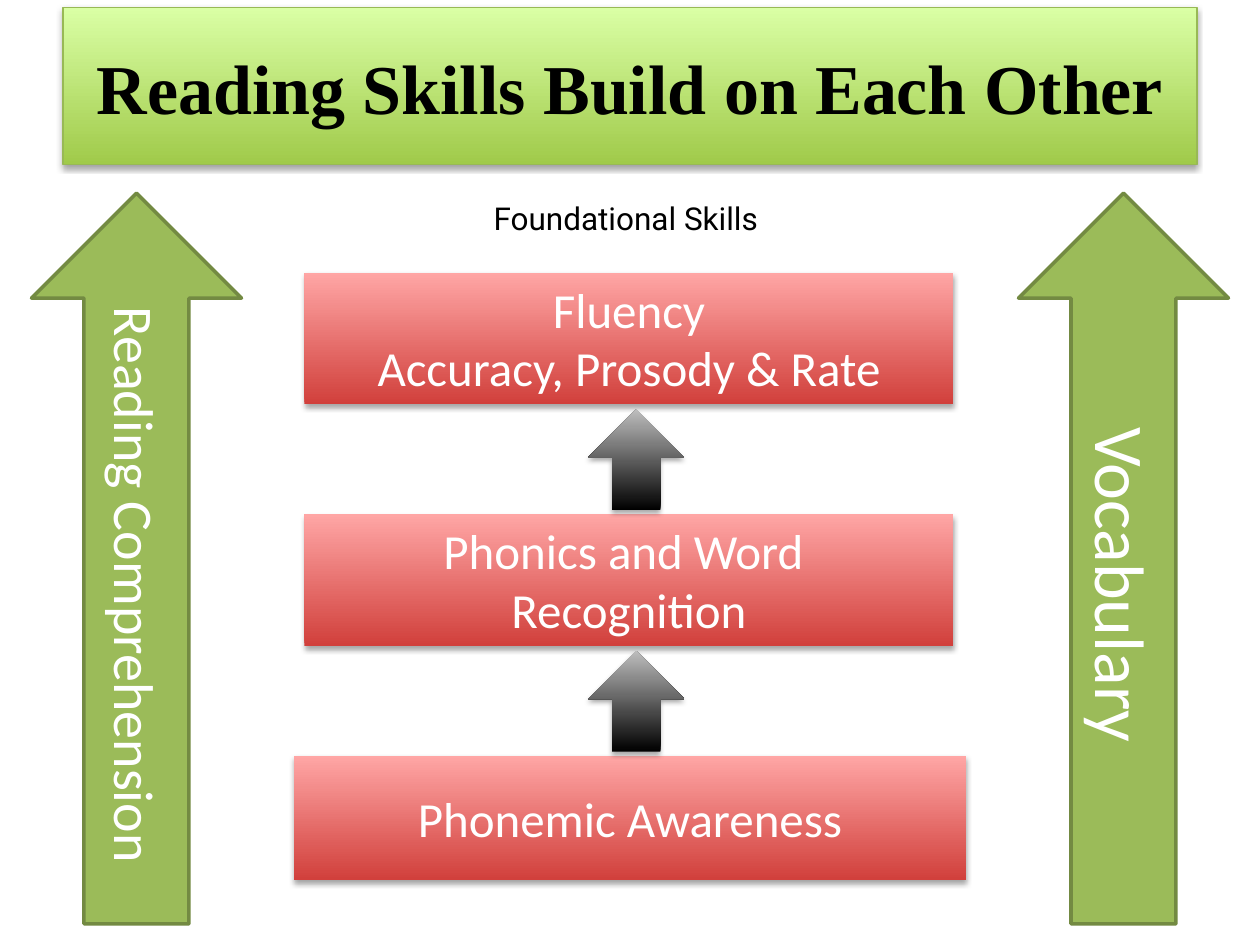
from lxml.etree import SubElement
from pptx import Presentation
from pptx.dml.color import RGBColor
from pptx.enum.shapes import MSO_SHAPE
from pptx.enum.text import MSO_ANCHOR, MSO_AUTO_SIZE, PP_ALIGN
from pptx.oxml.ns import qn
from pptx.util import Inches, Pt

WHITE = RGBColor(0xFF, 0xFF, 0xFF)
BLACK = RGBColor(0x00, 0x00, 0x00)
GREEN = RGBColor(0x9B, 0xBB, 0x59)
DARK_GREEN = RGBColor(0x73, 0x8A, 0x42)
BANNER_EDGE = RGBColor(0x98, 0xB9, 0x55)
BANNER_SHADES = RGBColor(0xA0, 0xCA, 0x4A), RGBColor(0xDA, 0xFF, 0xA5)
RED_SHADES = RGBColor(0xD1, 0x40, 0x3C), RGBColor(0xFF, 0xA6, 0xA5)
GREY_SHADES = BLACK, RGBColor(0xBD, 0xBD, 0xBD)

prs = Presentation()
prs.slide_width, prs.slide_height = Inches(10), Inches(7.5)
slide = prs.slides.add_slide(prs.slide_layouts[6])

# The slide is a grid of 120 columns by 90 rows.
COL = prs.slide_width / 120
ROW = prs.slide_height / 90


def add_block(preset, col, row, cols, rows, shades):
    """Add a borderless shape, shaded from bottom to top, with a soft shadow below."""
    block = slide.shapes.add_shape(
        preset, int(col * COL), int(row * ROW), int(cols * COL), int(rows * ROW))
    block.fill.gradient()
    block.fill.gradient_angle = 90
    for stop, shade in zip(block.fill.gradient_stops, shades):
        stop.color.rgb = shade
    block.line.fill.background()
    block.shadow.inherit = False
    effects = block.element.spPr.find(qn("a:effectLst"))
    shadow = SubElement(effects, qn("a:outerShdw"), blurRad=str(Pt(3.1)),
                        dist=str(Pt(1.8)), dir="5400000", rotWithShape="0")
    shadow_color = SubElement(shadow, qn("a:srgbClr"), val="000000")
    SubElement(shadow_color, qn("a:alpha"), val="35000")
    return block


def write(frame, lines, size, font, color, bold=False):
    frame.word_wrap = True
    for i, line in enumerate(lines):
        paragraph = frame.add_paragraph() if i else frame.paragraphs[0]
        paragraph.alignment = PP_ALIGN.CENTER
        run = paragraph.add_run()
        run.text = line
        run.font.size = Pt(size)
        run.font.name = font
        run.font.bold = bold
        run.font.color.rgb = color


# Title banner
banner = add_block(MSO_SHAPE.RECTANGLE, 6, 0.7, 108, 15, BANNER_SHADES)
banner.line.color.rgb = BANNER_EDGE
banner.line.width = Pt(0.75)
write(banner.text_frame, ["Reading Skills Build on Each Other"],
      40, "Times New Roman", BLACK, bold=True)

# Skills that grow alongside all the steps
for col, skill, size in [(3, "Reading Comprehension", 32), (97, "Vocabulary", 40)]:
    side_arrow = slide.shapes.add_shape(
        MSO_SHAPE.UP_ARROW, int(col * COL), int(18.4 * ROW), int(20 * COL), int(69.6 * ROW))
    side_arrow.fill.solid()
    side_arrow.fill.fore_color.rgb = GREEN
    side_arrow.line.color.rgb = DARK_GREEN
    side_arrow.line.width = Pt(2)
    side_arrow.shadow.inherit = False
    side_arrow.text_frame.vertical_anchor = MSO_ANCHOR.MIDDLE
    side_arrow.element.txBody.find(qn("a:bodyPr")).set("vert", "vert")
    write(side_arrow.text_frame, [skill], size, "Calibri", WHITE)

# Foundational skills, from the top step down
heading = slide.shapes.add_textbox(
    int(28.7 * COL), int(18.4 * ROW), int(61.8 * COL), int(4.8 * ROW))
write(heading.text_frame, ["Foundational Skills"], 18, "Roboto", BLACK)
heading.text_frame.auto_size = MSO_AUTO_SIZE.SHAPE_TO_FIT_TEXT

FIRST_STEP, STEP_PITCH = 26, 23
steps = [
    (["Fluency", "Accuracy, Prosody & Rate"], 29, 61.8, 12.5, MSO_ANCHOR.TOP),
    (["Phonics and Word ", "Recognition"], 29, 61.8, 12.5, MSO_ANCHOR.TOP),
    (["Phonemic Awareness"], 28, 64, 11.8, MSO_ANCHOR.MIDDLE),
]
for i, (lines, col, cols, rows, anchor) in enumerate(steps):
    row = FIRST_STEP + i * STEP_PITCH
    step = add_block(MSO_SHAPE.RECTANGLE, col, row, cols, rows, RED_SHADES)
    step.text_frame.vertical_anchor = anchor
    write(step.text_frame, lines, 28, "Calibri", WHITE)
    step.text_frame.auto_size = MSO_AUTO_SIZE.SHAPE_TO_FIT_TEXT
    if i:
        add_block(MSO_SHAPE.UP_ARROW, 56, row - 10, 9.2, 9.6, GREY_SHADES)

prs.save("out.pptx")
